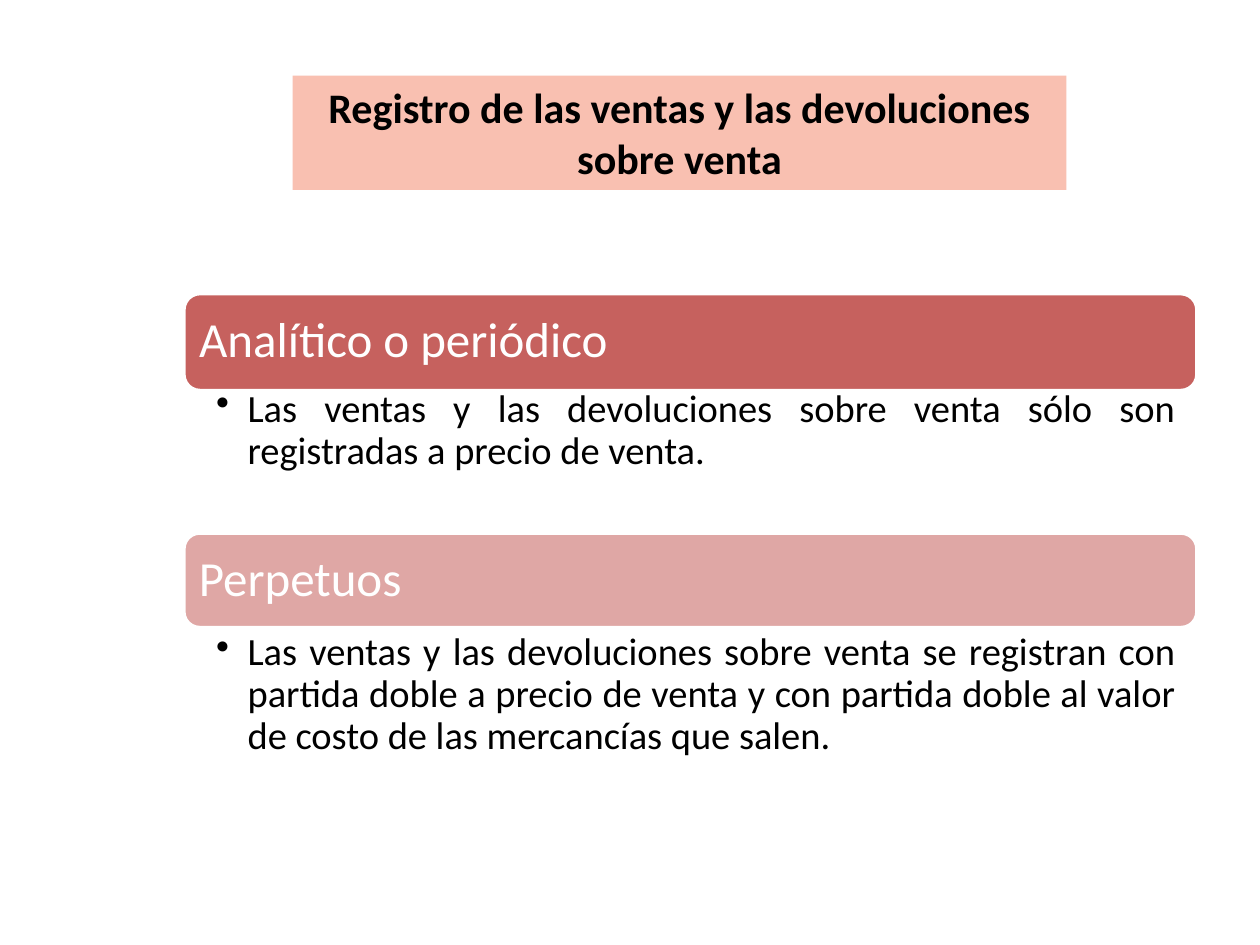
"""Slide on recording sales and sales returns under two inventory systems."""
from lxml.etree import SubElement
from pptx import Presentation
from pptx.dml.color import RGBColor
from pptx.enum.shapes import MSO_SHAPE
from pptx.enum.text import MSO_ANCHOR, PP_ALIGN
from pptx.oxml.ns import qn
from pptx.util import Pt

COLORS = {"title": "F9C0B1", "header": "C0504D", "white": "FFFFFF", "text": "000000"}
LEFT, WIDTH = 105.1, 578.9
SYSTEMS = [
    ("Analítico o periódico", 167.8, 55.4, 90, 220.3,
     "Las ventas y las devoluciones sobre venta sólo son registradas a precio de venta."),
    ("Perpetuos", 304.6, 54, 50, 359.3,
     "Las ventas y las devoluciones sobre venta se registran con partida doble a precio "
     "de venta y con partida doble al valor de costo de las mercancías que salen."),
]


def style_text(p, size, color, bold=False):
    font = p.runs[0].font
    font.name, font.size, font.bold = "Calibri", Pt(size), bold
    font.color.rgb = RGBColor.from_string(COLORS[color])


def set_frame(tf, left, top, right, bottom, anchor):
    tf.word_wrap = True
    tf.margin_left, tf.margin_top = Pt(left), Pt(top)
    tf.margin_right, tf.margin_bottom = Pt(right), Pt(bottom)
    tf.vertical_anchor = anchor


prs = Presentation()
prs.slide_width, prs.slide_height = Pt(720), Pt(540)
s = prs.slides.add_slide(prs.slide_layouts[6])

for name, top, height, opacity, detail_top, detail in SYSTEMS:
    sp = s.shapes.add_shape(MSO_SHAPE.ROUNDED_RECTANGLE, Pt(LEFT), Pt(top), Pt(WIDTH), Pt(height))
    sp.shadow.inherit = False
    sp.fill.solid()
    sp.fill.fore_color.rgb = RGBColor.from_string(COLORS["header"])
    clr = sp.fill._xPr.find(qn("a:solidFill"))[0]
    SubElement(clr, qn("a:alpha")).set("val", str(opacity * 1000))
    sp.line.color.rgb = RGBColor.from_string(COLORS["white"])
    sp.line.width = Pt(2)
    tf = sp.text_frame
    set_frame(tf, 6, 6, 6, 6, MSO_ANCHOR.MIDDLE)
    p = tf.paragraphs[0]
    p.text = name
    p.alignment = PP_ALIGN.LEFT
    p.line_spacing = 0.9
    style_text(p, 28, "white")

    sp = s.shapes.add_textbox(Pt(LEFT), Pt(detail_top), Pt(WIDTH), Pt(85))
    tf = sp.text_frame
    set_frame(tf, 18.4, 2.2, 12.2, 2.2, MSO_ANCHOR.TOP)
    p = tf.paragraphs[0]
    p.text = detail
    p.alignment = PP_ALIGN.JUSTIFY
    p.line_spacing = 0.9
    pPr = p._p.get_or_add_pPr()
    pPr.set("marL", str(Pt(18)))
    pPr.set("indent", str(Pt(-18)))
    SubElement(pPr, qn("a:buChar")).set("char", "•")
    style_text(p, 22, "text")

sp = s.shapes.add_shape(MSO_SHAPE.RECTANGLE, Pt(167.2), Pt(43.2), Pt(442.2), Pt(65.4))
sp.shadow.inherit = False
sp.fill.solid()
sp.fill.fore_color.rgb = RGBColor.from_string(COLORS["title"])
sp.line.fill.background()
tf = sp.text_frame
set_frame(tf, 7.2, 3.6, 7.2, 3.6, MSO_ANCHOR.TOP)
p = tf.paragraphs[0]
p.text = "Registro de las ventas y las devoluciones sobre venta"
p.alignment = PP_ALIGN.CENTER
style_text(p, 24, "text", bold=True)

prs.save("out.pptx")
